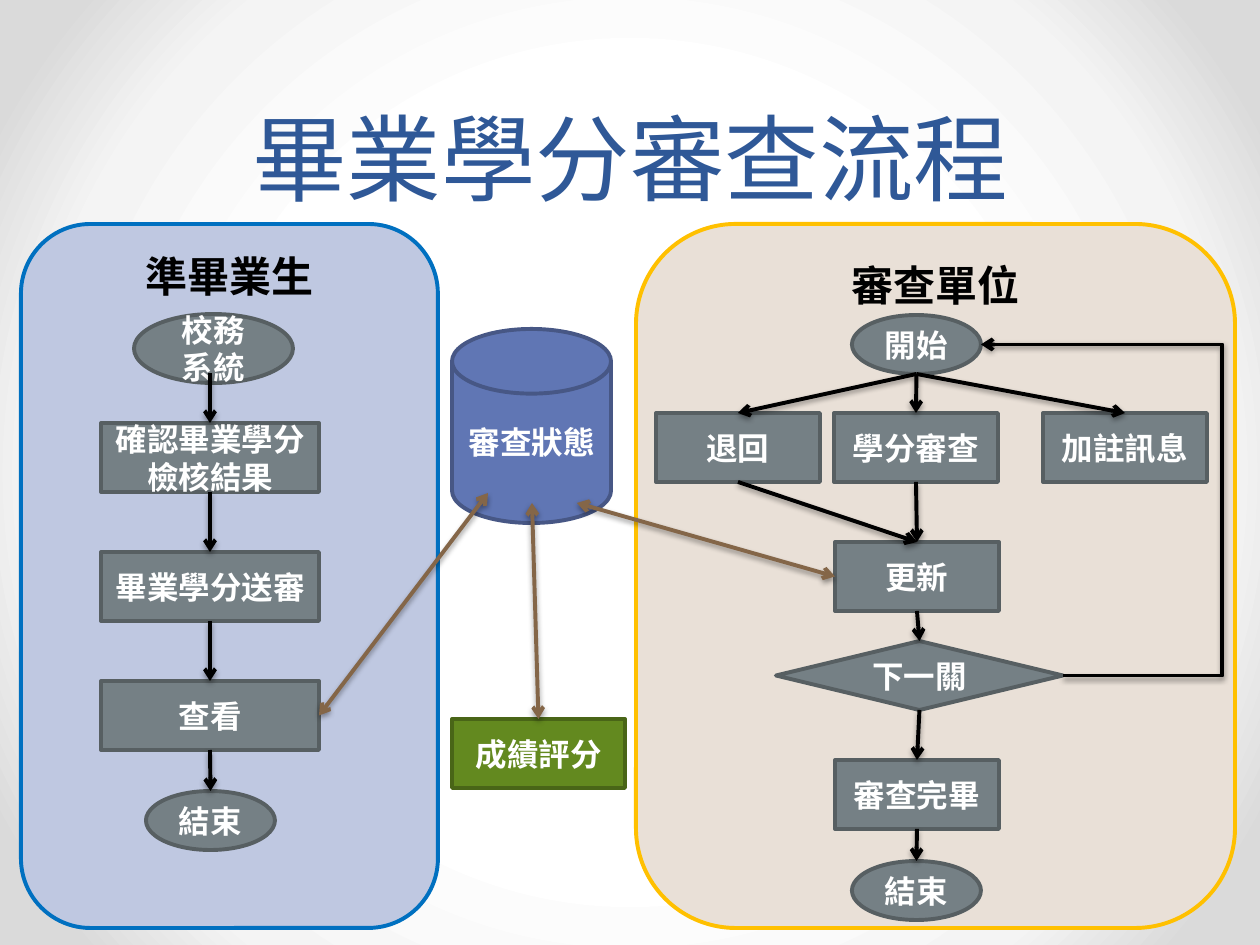
from pptx import Presentation
from pptx.dml.color import RGBColor
from pptx.enum.shapes import MSO_CONNECTOR, MSO_SHAPE
from pptx.enum.text import MSO_ANCHOR, MSO_AUTO_SIZE, PP_ALIGN
from pptx.oxml import parse_xml
from pptx.oxml.ns import nsdecls, qn
from pptx.util import Emu, Pt

PX = 914400 / 126
FONT = "Times New Roman"
RECTANGLE = MSO_SHAPE.RECTANGLE
ELLIPSE = MSO_SHAPE.OVAL
DIAMOND = MSO_SHAPE.DIAMOND
PANEL = MSO_SHAPE.ROUNDED_RECTANGLE
DISK = MSO_SHAPE.FLOWCHART_MAGNETIC_DISK
STRAIGHT = MSO_CONNECTOR.STRAIGHT
ELBOW = MSO_CONNECTOR.ELBOW
TOP, LEFT, BOTTOM, RIGHT = range(4)

BLACK = RGBColor(0x00, 0x00, 0x00)
WHITE = RGBColor(0xFF, 0xFF, 0xFF)
TITLE_BLUE = RGBColor(0x2F, 0x58, 0x97)
GRAY = RGBColor(0x75, 0x80, 0x85)
DARK_GRAY = RGBColor(0x57, 0x5F, 0x62)
BLUE = RGBColor(0x60, 0x76, 0xB4)
DARK_BLUE = RGBColor(0x47, 0x57, 0x85)
GREEN = RGBColor(0x63, 0x89, 0x1F)
DARK_GREEN = RGBColor(0x49, 0x65, 0x17)
BROWN = RGBColor(0x84, 0x66, 0x48)
PALE_BLUE = RGBColor(0xBF, 0xC8, 0xE1)
BRIGHT_BLUE = RGBColor(0x00, 0x70, 0xC0)
BEIGE = RGBColor(0xE9, 0xE0, 0xD7)
YELLOW = RGBColor(0xFF, 0xC0, 0x00)
BACKGROUND_STOPS = [(50, "FFFFFF"), (76, "F4F4F4"), (92, "DADADA")]


def px(length):
    return Emu(round(length * PX))


def set_background(slide):
    stops = "".join(
        f'<a:gs pos="{position * 1000}"><a:srgbClr val="{color}"/></a:gs>'
        for position, color in BACKGROUND_STOPS
    )
    background = parse_xml(
        f'<p:bg {nsdecls("p", "a")}><p:bgPr><a:gradFill rotWithShape="1">'
        f'<a:gsLst>{stops}</a:gsLst><a:path path="circle">'
        '<a:fillToRect l="50000" t="50000" r="50000" b="50000"/></a:path>'
        "</a:gradFill><a:effectLst/></p:bgPr></p:bg>"
    )
    slide.element.cSld.insert(0, background)


def write_text(text_frame, text, size, color, bold, anchor):
    text_frame.text = text
    text_frame.word_wrap = True
    text_frame.vertical_anchor = anchor
    paragraph = text_frame.paragraphs[0]
    paragraph.alignment = PP_ALIGN.CENTER
    font = paragraph.font
    font.name = FONT
    font.size = Pt(size)
    font.bold = bold
    font.color.rgb = color
    return paragraph


def add_title(slide, text):
    title = slide.shapes.title
    title.left, title.top, title.width, title.height = map(px, (63, 0, 1134, 220))
    title.text_frame.auto_size = MSO_AUTO_SIZE.NONE
    paragraph = write_text(title.text_frame, text, 54, TITLE_BLUE, False, MSO_ANCHOR.BOTTOM)
    paragraph.line_spacing = Pt(58)


def add_box(slide, kind, box, fill, line):
    shape = slide.shapes.add_shape(kind, *map(px, box))
    shape.shadow.inherit = False
    shape.fill.solid()
    shape.fill.fore_color.rgb = fill
    shape.line.color.rgb = line
    shape.line.width = Pt(2.25)
    return shape


def add_panel(slide, text, box, fill, line):
    panel = add_box(slide, PANEL, box, fill, line)
    write_text(panel.text_frame, text, 24, BLACK, True, MSO_ANCHOR.TOP)


def add_node(slide, text, kind, box, fill=GRAY, line=DARK_GRAY):
    node = add_box(slide, kind, box, fill, line)
    write_text(node.text_frame, text, 18, WHITE, True, MSO_ANCHOR.MIDDLE)
    return node


def side_point(shape, side):
    middle_x = shape.left + shape.width // 2
    middle_y = shape.top + shape.height // 2
    return {
        TOP: (middle_x, shape.top),
        LEFT: (shape.left, middle_y),
        BOTTOM: (middle_x, shape.top + shape.height),
        RIGHT: (shape.left + shape.width, middle_y),
    }[side]


def style_arrow(connector, color, both_ends):
    connector.line.color.rgb = color
    connector.line.width = Pt(2.25)
    properties = connector.element.spPr
    line = properties.find(qn("a:ln"))
    for end in ("headEnd", "tailEnd") if both_ends else ("tailEnd",):
        line.append(parse_xml(f'<a:{end} {nsdecls("a")} type="arrow"/>'))
    properties.append(parse_xml(
        f'<a:effectLst {nsdecls("a")}><a:outerShdw blurRad="40000" dist="20000" '
        'dir="5400000" rotWithShape="0"><a:srgbClr val="000000">'
        '<a:alpha val="38000"/></a:srgbClr></a:outerShdw></a:effectLst>'
    ))


def add_arrow(slide, start, end, color=BLACK, both_ends=False):
    points = [
        side_point(*place) if hasattr(place[0], "left") else tuple(map(px, place))
        for place in (start, end)
    ]
    connector = slide.shapes.add_connector(STRAIGHT, *points[0], *points[1])
    for place, join in ((start, connector.begin_connect), (end, connector.end_connect)):
        if hasattr(place[0], "left") and place[0].auto_shape_type != ELLIPSE:
            join(*place)
    style_arrow(connector, color, both_ends)


def add_return_arrow(slide, source, target):
    connector = slide.shapes.add_connector(
        ELBOW, *side_point(source, RIGHT), *side_point(target, RIGHT)
    )
    geometry = connector.element.spPr.find(qn("a:prstGeom"))
    guides = geometry.get_or_add_avLst()
    guides.append(parse_xml(f'<a:gd {nsdecls("a")} name="adj1" fmla="val -194300"/>'))
    style_arrow(connector, BLACK, False)


def add_student_flow(slide):
    add_node(slide, "校務系統", ELLIPSE, (134, 314, 159, 69))
    labels = ("確認畢業學分檢核結果", "畢業學分送審", "查看")
    steps = [
        add_node(slide, label, RECTANGLE, (101, 423 + 129 * index, 218, 69))
        for index, label in enumerate(labels)
    ]
    finish = add_node(slide, "結束", ELLIPSE, (146, 791, 129, 59))
    add_arrow(slide, (210, 373), (steps[0], TOP))
    for source, target in zip(steps, steps[1:] + [finish]):
        add_arrow(slide, (source, BOTTOM), (target, TOP))
    return steps[-1]


def add_review_flow(slide):
    start = add_node(slide, "開始", ELLIPSE, (852, 315, 129, 59))
    choices = [
        add_node(slide, label, RECTANGLE, (left, 413, 164, 69))
        for label, left in (("退回", 656), ("學分審查", 834), ("加註訊息", 1043))
    ]
    update = add_node(slide, "更新", RECTANGLE, (835, 542, 164, 69))
    decision = add_node(slide, "下一關", DIAMOND, (776, 641, 287, 69))
    complete = add_node(slide, "審查完畢", RECTANGLE, (835, 760, 164, 69))
    finish = add_node(slide, "結束", ELLIPSE, (852, 861, 129, 59))
    links = [(start, choice) for choice in choices]
    links += [(choice, update) for choice in choices[:2]]
    links += [(update, decision), (decision, complete), (complete, finish)]
    for source, target in links:
        add_arrow(slide, (source, BOTTOM), (target, TOP))
    add_return_arrow(slide, decision, start)
    return update


def main():
    presentation = Presentation()
    presentation.slide_width = px(1260)
    presentation.slide_height = px(945)
    slide = presentation.slides.add_slide(presentation.slide_layouts[5])
    set_background(slide)
    add_title(slide, "畢業學分審查流程")
    add_panel(slide, "審查單位", (636, 224, 599, 704), BEIGE, YELLOW)
    add_panel(slide, "準畢業生", (21, 224, 417, 704), PALE_BLUE, BRIGHT_BLUE)
    view = add_student_flow(slide)
    update = add_review_flow(slide)
    add_node(slide, "審查狀態", DISK, (452, 329, 159, 194), BLUE, DARK_BLUE)
    score = add_node(slide, "成績評分", RECTANGLE, (452, 719, 173, 69), GREEN, DARK_GREEN)
    for source, point in (
        ((view, RIGHT), (488, 493)),
        ((score, TOP), (532, 503)),
        ((update, LEFT), (577, 503)),
    ):
        add_arrow(slide, source, point, BROWN, True)
    presentation.save("out.pptx")


if __name__ == "__main__":
    main()
